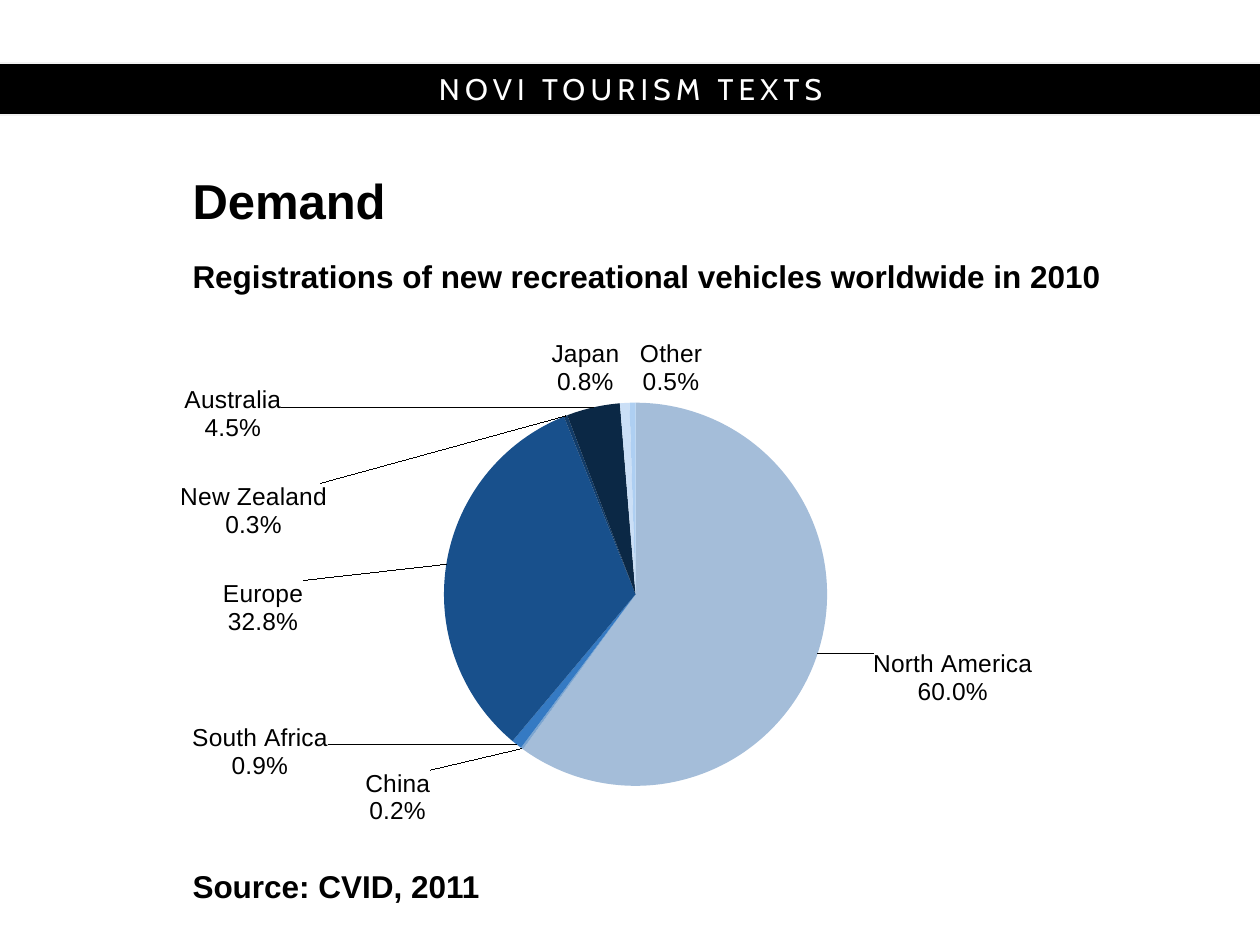
from copy import deepcopy
from pptx import Presentation
from pptx.chart.data import CategoryChartData
from pptx.dml.color import RGBColor
from pptx.enum.chart import XL_CHART_TYPE, XL_LABEL_POSITION
from pptx.enum.shapes import MSO_SHAPE
from pptx.enum.text import MSO_ANCHOR, PP_ALIGN
from pptx.oxml import parse_xml
from pptx.oxml.ns import nsdecls, qn
from pptx.util import Inches, Pt

PIE = XL_CHART_TYPE.PIE
OUTSIDE = XL_LABEL_POSITION.OUTSIDE_END
RECTANGLE = MSO_SHAPE.RECTANGLE
MIDDLE = MSO_ANCHOR.MIDDLE
CENTER = PP_ALIGN.CENTER


def rgb(value):
    return RGBColor.from_string(value)


def manual_layout(inner=False, **shares):
    target = '<c:layoutTarget val="inner"/><c:xMode val="edge"/><c:yMode val="edge"/>' if inner else ""
    values = "".join(f'<c:{key} val="{share}"/>' for key, share in shares.items())
    return parse_xml(f'<c:layout {nsdecls("c")}><c:manualLayout>{target}{values}</c:manualLayout></c:layout>')


prs = Presentation()
prs.slide_width, prs.slide_height = Inches(10), Inches(7.5)
W, H = prs.slide_width, prs.slide_height
slide = prs.slides.add_slide(prs.slide_layouts[6])
left, column = int(W * 0.143), int(W * 0.787)

banner = slide.shapes.add_shape(RECTANGLE, int(-W * 0.008), int(H / 15), int(W * 1.017), int(H * 0.055))
banner.shadow.inherit = False
banner.fill.solid()
banner.fill.fore_color.rgb = rgb("000000")
banner.line.color.rgb = rgb("F2F2F2")
banner.line.width = Pt(0.75)
banner.text_frame.vertical_anchor = MIDDLE
series_name = banner.text_frame.paragraphs[0]
series_name.alignment = CENTER
run = series_name.add_run()
run.text = "NOVI TOURISM TEXTS"
run.font.name = "Cabin"
run.font.size = Pt(17)
run.font.color.rgb = rgb("FFFFFF")
run.font._element.set("spc", "300")

for text, top, height, size in [
    ("Demand", 0.18, 0.064, 28),
    ("Registrations of new recreational vehicles worldwide in 2010", 0.265, 0.053, 18),
    ("Source: CVID, 2011", 0.911, 0.053, 18),
]:
    box = slide.shapes.add_textbox(left, int(H * top), column, int(H * height))
    box.text_frame.word_wrap = True
    box.text_frame.vertical_anchor = MIDDLE
    run = box.text_frame.paragraphs[0].add_run()
    run.text = text
    run.font.name = "Arial"
    run.font.size = Pt(size)
    run.font.bold = True
    run.font.color.rgb = rgb("000000")

regions = [
    ("North America", 60, "A4BDD9", (0.05, -0.01)),
    ("China", 0.2, "7CA5D0", (-0.09, 0.03)),
    ("South Africa", 0.9, "357AC3", (-0.19, -0.05)),
    ("Europe", 32.8, "18508C", (-0.14, 0.14)),
    ("New Zealand", 0.3, "123C69", (-0.25, 0.25)),
    ("Australia", 4.5, "0B2845", (-0.32, 0.08)),
    ("Japan", 0.8, "CBDFF6", (-0.04, 0)),
    ("Other", 0.5, "AECFF2", (0.04, 0)),
]
data = CategoryChartData()
data.categories = [region[0] for region in regions]
data.add_series("Series 1", [region[1] for region in regions])
chart = slide.shapes.add_chart(PIE, left, int(H * 0.344), int(W * 0.769), int(H * 0.548), data).chart
chart.has_legend = False
chart.has_title = False
chart.font.name = "Arial"
chart.font.size = Pt(18)
chart.font.color.rgb = rgb("000000")
chart.plots[0].vary_by_categories = True

plot_area = chart._chartSpace.find(".//" + qn("c:plotArea"))
for old_layout in plot_area.findall(qn("c:layout")):
    plot_area.remove(old_layout)
plot_area.insert(0, manual_layout(inner=True, x=0.27, y=0.15, w=0.4, h=0.74))

registrations = chart.plots[0].series[0]
labels = registrations.data_labels
labels.show_value = False
labels.show_category_name = True
labels.show_percentage = True
labels.number_format = "0.0%"
labels.number_format_is_linked = False
labels.position = OUTSIDE
labels.font.name = "Arial"
labels.font.size = Pt(14)
labels.font.color.rgb = rgb("000000")
separator = parse_xml(f'<c:separator {nsdecls("c")}>\n</c:separator>')
labels._element.find(qn("c:showBubbleSize")).addnext(separator)
shared = [part for part in labels._element if part.tag != qn("c:showLeaderLines")]

for index, (region, share, color, (shift_x, shift_y)) in enumerate(regions):
    wedge = registrations.points[index].format
    wedge.fill.solid()
    wedge.fill.fore_color.rgb = rgb(color)
    wedge.line.fill.background()
    label = parse_xml(f'<c:dLbl {nsdecls("c")}><c:idx val="{index}"/></c:dLbl>')
    label.append(manual_layout(x=shift_x, y=shift_y))
    for part in shared:
        label.append(deepcopy(part))
    labels._element.insert(index, label)

prs.save("out.pptx")
